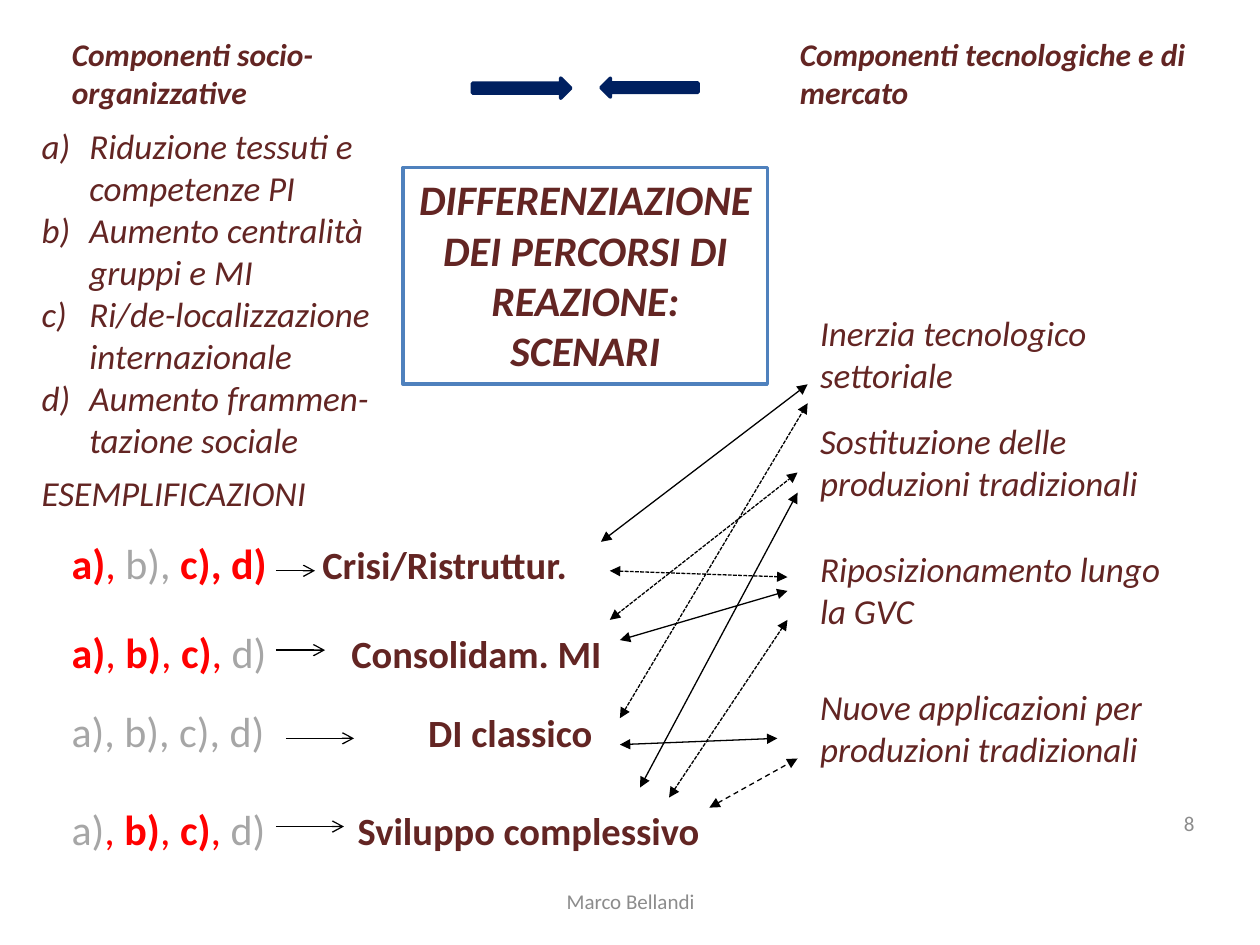
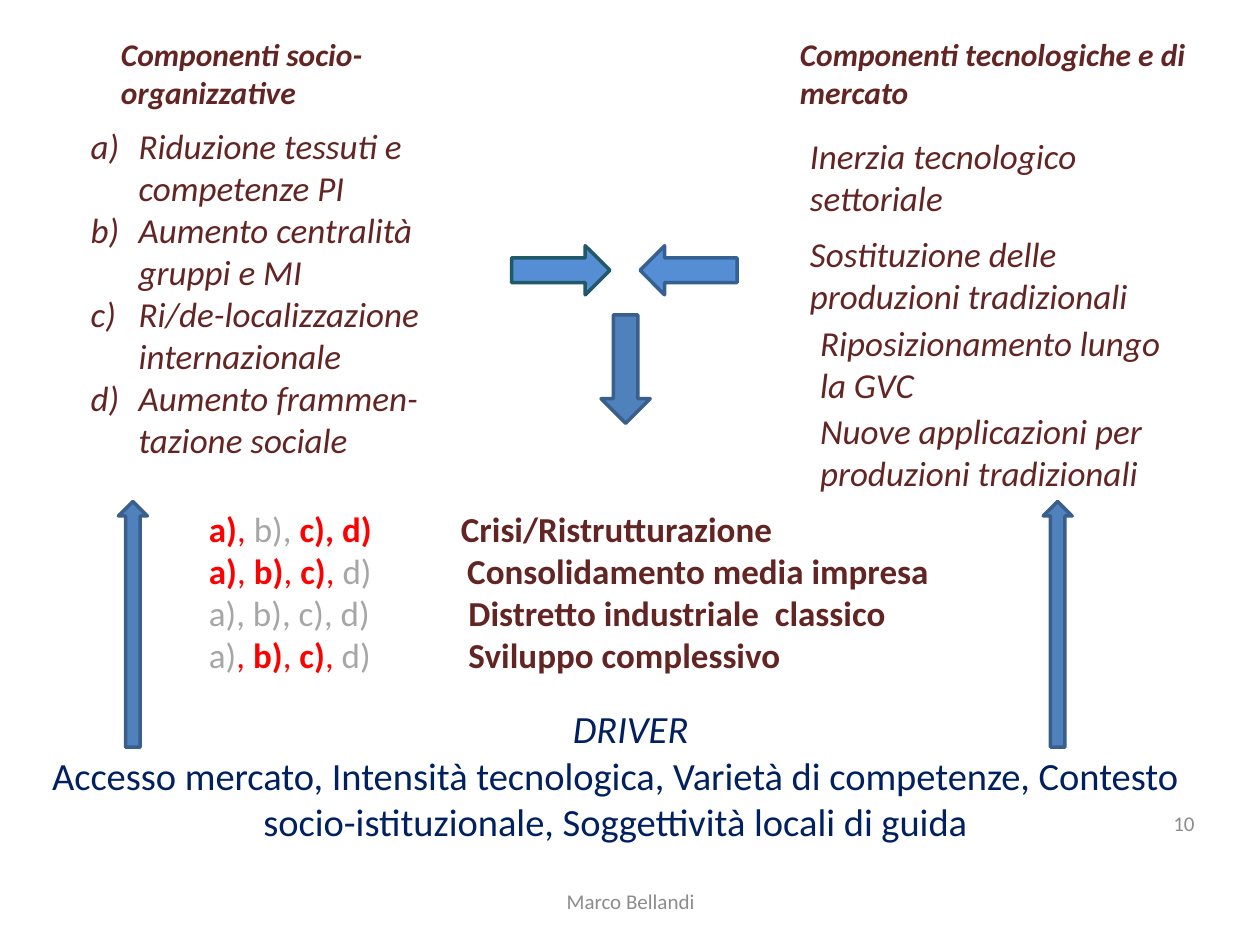
from lxml import etree
from pptx import Presentation
from pptx.dml.color import RGBColor
from pptx.enum.dml import MSO_LINE
from pptx.enum.shapes import MSO_CONNECTOR, MSO_SHAPE
from pptx.enum.text import MSO_ANCHOR, MSO_AUTO_SIZE, PP_ALIGN
from pptx.oxml.ns import qn
from pptx.util import Inches, Pt

FONT = "Calibri"
BROWN = RGBColor(0x63, 0x25, 0x23)
RED = RGBColor(0xFF, 0x00, 0x00)
GREY = RGBColor(0xA6, 0xA6, 0xA6)
FOOTER_GREY = RGBColor(0x8C, 0x8C, 0x8C)
NAVY = RGBColor(0x00, 0x20, 0x60)
BLUE = RGBColor(0x4F, 0x81, 0xBD)
DARK_BLUE = RGBColor(0x3A, 0x5F, 0x8C)
LIGHT_BLUE = RGBColor(0x55, 0x8E, 0xD5)
MID_BLUE = RGBColor(0x37, 0x60, 0x92)
TEAL = RGBColor(0x21, 0x59, 0x68)
WHITE = RGBColor(0xFF, 0xFF, 0xFF)
BLACK = RGBColor(0x00, 0x00, 0x00)

SOCIAL_COMPONENTS = [
    "Riduzione tessuti e competenze PI",
    "Aumento centralità gruppi e MI",
    "Ri/de-localizzazione internazionale",
    "Aumento frammen-tazione sociale",
]
TECHNOLOGY_COMPONENTS = [
    ("Inerzia tecnologico settoriale", 2.58),
    ("Sostituzione delle produzioni tradizionali", 2.99),
    ("Riposizionamento lungo la GVC", 2.91),
    ("Nuove applicazioni per produzioni tradizionali", 2.91),
]
# Component codes of each scenario as runs: text, colour, bold
SCENARIO_CODES = [
    [("a)", RED, True), (", ", RED, False), ("b), ", GREY, False), ("c), d)", RED, True)],
    [("a)", RED, True), (", ", RED, False), ("b)", RED, True), (", ", RED, False),
     ("c)", RED, True), (", ", RED, False), ("d)", GREY, False)],
    [("a), b), c), d)", GREY, False)],
    [("a)", GREY, False), (", ", RED, False), ("b)", RED, True), (", ", RED, False),
     ("c)", RED, True), (", ", RED, False), ("d)", GREY, False)],
]


def add_text(slide, paragraphs, at, shape=None, size=20, color=BROWN, bold=False,
             italic=False, align=PP_ALIGN.LEFT, anchor=MSO_ANCHOR.TOP, tabs=()):
    """Write paragraphs (a string, or runs of text, colour, bold and size) into a shape."""
    shape = shape or slide.shapes.add_textbox(0, 0, 0, 0)
    shape.left, shape.top, shape.width, shape.height = map(Inches, at)
    frame = shape.text_frame
    frame.word_wrap = True
    frame.auto_size = MSO_AUTO_SIZE.NONE
    frame.vertical_anchor = anchor
    for index, runs in enumerate(paragraphs):
        paragraph = frame.add_paragraph() if index else frame.paragraphs[0]
        paragraph.alignment = align
        paragraph.space_before = Pt(0)
        if tabs:
            tab_list = etree.SubElement(paragraph._p.get_or_add_pPr(), qn("a:tabLst"))
            etree.SubElement(tab_list, qn("a:tab"), pos=str(Inches(tabs[index])), algn="l")
        if isinstance(runs, str):
            runs = [(runs, color, bold)]
        for text, run_color, run_bold, *run_size in runs:
            run = paragraph.add_run()
            run.text = text
            run.font.name = FONT
            run.font.size = Pt(run_size[0] if run_size else size)
            run.font.bold = run_bold
            run.font.italic = italic
            run.font.color.rgb = run_color
    return shape


def add_block(slide, kind, at, fill, line):
    """Add a filled preset shape with a 2 pt outline and no shadow."""
    shape = slide.shapes.add_shape(kind, *map(Inches, at))
    shape.shadow.inherit = False
    shape.fill.solid()
    shape.fill.fore_color.rgb = fill
    shape.line.color.rgb = line
    shape.line.width = Pt(2)
    return shape


presentation = Presentation()
presentation.slide_width = Inches(10)
presentation.slide_height = Inches(7.5)

# Shared frame: left offset, page number, list tail, corners of the technology texts
slides = []
for left, number, list_tail, corners in [
    (0.47, "8", ["ESEMPLIFICAZIONI"], [(6.41, 2.42), (6.41, 3.28), (6.41, 4.3), (6.41, 5.39)]),
    (0.86, "10", [], [(6.33, 1.02), (6.33, 1.8), (6.41, 2.5), (6.41, 3.2)]),
]:
    slide = presentation.slides.add_slide(presentation.slide_layouts[1])
    slides.append(slide)
    title, body = slide.placeholders

    # Headings of the two columns
    add_text(slide, ["Componenti socio-organizzative"], (left, 0.23, 2.42, 0.71),
             shape=title, size=18, bold=True, italic=True)
    add_text(slide, ["Componenti tecnologiche e di mercato"], (6.25, 0.23, 3.36, 0.78),
             size=18, bold=True, italic=True)

    # Lettered list of social components
    add_text(slide, SOCIAL_COMPONENTS + list_tail,
             (left - 0.24, 0.94, 2.89, 3.21 if list_tail else 2.79), shape=body, italic=True)
    for index, paragraph in enumerate(body.text_frame.paragraphs):
        properties = paragraph._p.get_or_add_pPr()
        properties.set("marL", str(Inches(0.38)))
        properties.set("indent", str(Inches(-0.38)))
        if index < len(SOCIAL_COMPONENTS):
            etree.SubElement(properties, qn("a:buFont"), typeface="+mj-lt")
            etree.SubElement(properties, qn("a:buAutoNum"), type="alphaLcParenR")
        else:
            paragraph.space_before = Pt(6)
            etree.SubElement(properties, qn("a:buNone"))

    # Technology components
    for (text, width), corner in zip(TECHNOLOGY_COMPONENTS, corners):
        add_text(slide, [text], (*corner, width, 0.77), italic=True)

    # Footer and page number
    add_text(slide, ["Marco Bellandi"], (3.42, 6.95, 3.17, 0.4), size=12, color=FOOTER_GREY,
             align=PP_ALIGN.CENTER, anchor=MSO_ANCHOR.MIDDLE)
    add_text(slide, [number], (8.91, 6.25, 0.67, 0.57), size=12, color=FOOTER_GREY,
             align=PP_ALIGN.RIGHT, anchor=MSO_ANCHOR.MIDDLE)

paths_slide, driver_slide = slides

# Slide 1: central box
paths_at = (3.2, 1.33, 2.89, 1.72)
paths_box = add_block(paths_slide, MSO_SHAPE.RECTANGLE, paths_at, WHITE, BLUE)
add_text(paths_slide, ["DIFFERENZIAZIONE DEI PERCORSI DI REAZIONE:", "SCENARI"], paths_at,
         shape=paths_box, size=24, bold=True, italic=True, align=PP_ALIGN.CENTER)

# Slide 1: one row for each scenario
for codes, (name, top, width, tab) in zip(SCENARIO_CODES, [
    ("Crisi/Ristruttur.", 4.22, 4.3, 1.99),
    ("Consolidam. MI", 4.92, 4.69, 2.22),
    ("DI classico", 5.55, 4.49, 2.83),
    ("Sviluppo complessivo", 6.33, 5.47, 2.27),
]):
    add_text(paths_slide, [codes + [("\t" + name, BROWN, True, 22)]],
             (0.47, top, width, 0.5), size=24, tabs=[tab])

# Slide 1: codes to scenarios (one open head), scenarios to technology (two filled heads)
code_arrows = [
    (2.19, 4.53, 2.5, 4.53), (2.19, 5.16, 2.58, 5.16),
    (2.27, 5.86, 2.81, 5.86), (2.19, 6.56, 2.73, 6.56),
]
technology_arrows = [
    (4.77, 4.3, 6.41, 3.05, None),
    (4.84, 4.92, 6.33, 3.75, MSO_LINE.SQUARE_DOT),
    (4.92, 5.08, 6.25, 4.69, None),
    (4.92, 5.91, 6.17, 5.86, None),
    (5.08, 6.25, 6.33, 3.91, None),
    (5.31, 6.33, 6.25, 4.92, MSO_LINE.SQUARE_DOT),
    (5.63, 6.41, 6.33, 6.02, MSO_LINE.DASH),
    (4.92, 5.7, 6.41, 3.2, MSO_LINE.SQUARE_DOT),
    (4.84, 4.53, 6.25, 4.58, MSO_LINE.SQUARE_DOT),
]
for *ends, dash, heads in (
    [(*ends, None, {"tailEnd": "arrow"}) for ends in code_arrows]
    + [(*arrow, {"headEnd": "triangle", "tailEnd": "triangle"}) for arrow in technology_arrows]
):
    connector = paths_slide.shapes.add_connector(MSO_CONNECTOR.STRAIGHT, *map(Inches, ends))
    connector.line.color.rgb = BLACK
    connector.line.width = Pt(0.75)
    if dash:
        connector.line.dash_style = dash
    outline = connector.line._get_or_add_ln()
    for tag, head in heads.items():
        etree.SubElement(outline, qn("a:" + tag), type=head)
    etree.SubElement(connector._element.spPr, qn("a:effectLst"))

# Slide 2: scenario list
scenario_names = ["Crisi/Ristrutturazione", "Consolidamento media impresa",
                  "Distretto industriale  classico", "Sviluppo complessivo"]
add_text(driver_slide,
         [codes + [("\t" + name, BROWN, True)]
          for codes, name in zip(SCENARIO_CODES, scenario_names)],
         (1.56, 3.98, 6.41, 1.45), tabs=[2, 2.05, 2.06, 2.06])

# Slide 2: drivers
driver_box = add_text(driver_slide, [
    "DRIVER",
    "Accesso mercato, Intensità tecnologica, Varietà di competenze, "
    "Contesto socio-istituzionale, Soggettività locali di guida",
], (0.16, 5.55, 9.45, 1.25), size=22, color=NAVY, align=PP_ALIGN.CENTER)
driver_heading = driver_box.text_frame.paragraphs[0]
driver_heading.runs[0].font.italic = True
driver_heading.space_before = Pt(2)
driver_heading._p.get_or_add_pPr().set("marL", str(Inches(0.24)))

# Block arrows on both slides
for slide, kind, at, fill, line in [
    (paths_slide, MSO_SHAPE.RIGHT_ARROW, (3.75, 0.62, 0.78, 0.16), NAVY, NAVY),
    (paths_slide, MSO_SHAPE.LEFT_ARROW, (4.77, 0.62, 0.77, 0.15), NAVY, NAVY),
    (driver_slide, MSO_SHAPE.UP_ARROW, (0.94, 3.98, 0.23, 1.95), BLUE, DARK_BLUE),
    (driver_slide, MSO_SHAPE.UP_ARROW, (8.28, 3.98, 0.23, 1.95), BLUE, DARK_BLUE),
    (driver_slide, MSO_SHAPE.RIGHT_ARROW, (4.06, 1.95, 0.78, 0.39), LIGHT_BLUE, TEAL),
    (driver_slide, MSO_SHAPE.LEFT_ARROW, (5.08, 1.95, 0.77, 0.39), LIGHT_BLUE, MID_BLUE),
    (driver_slide, MSO_SHAPE.DOWN_ARROW, (4.77, 2.5, 0.39, 0.86), BLUE, DARK_BLUE),
]:
    add_block(slide, kind, at, fill, line)

presentation.save("out.pptx")
